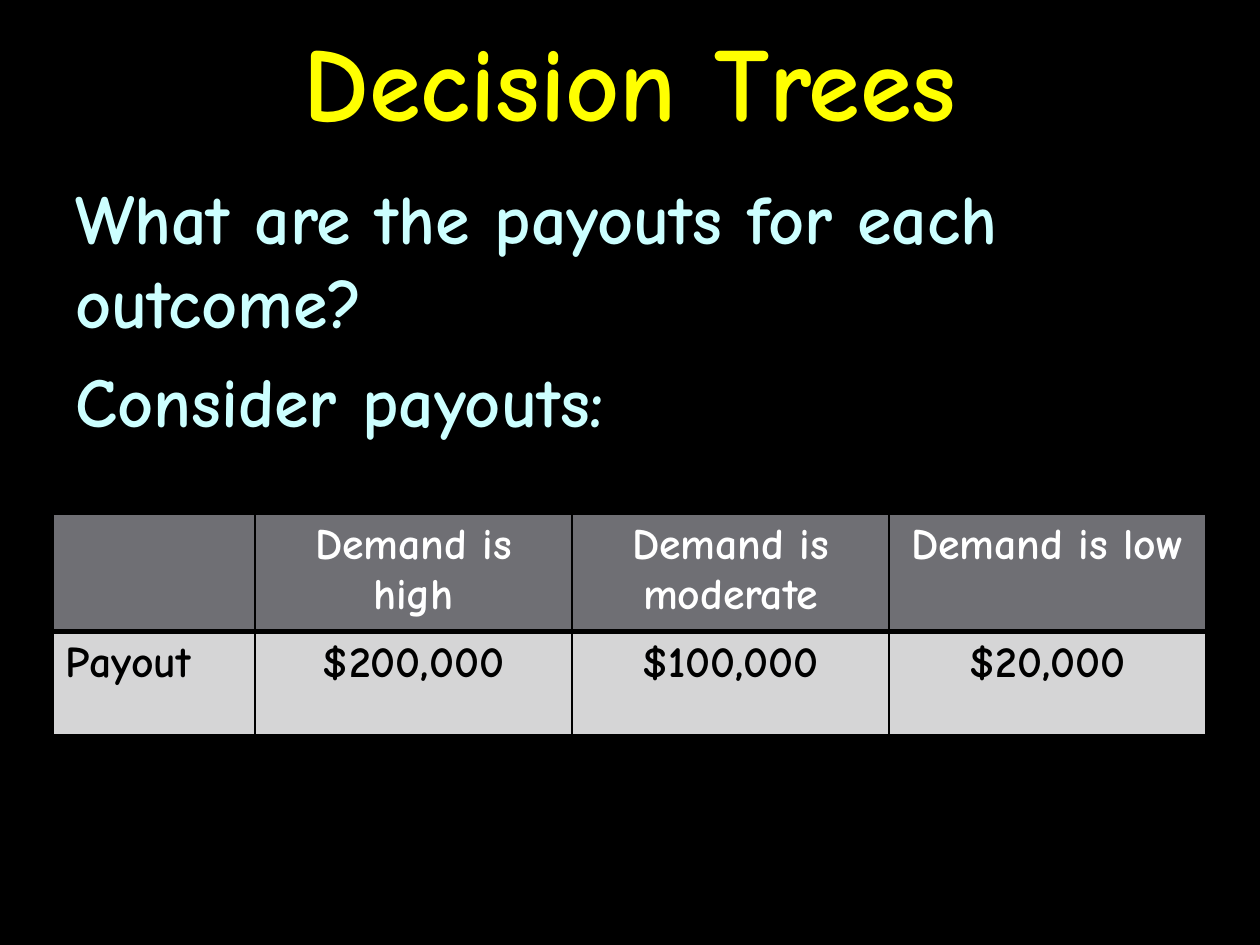
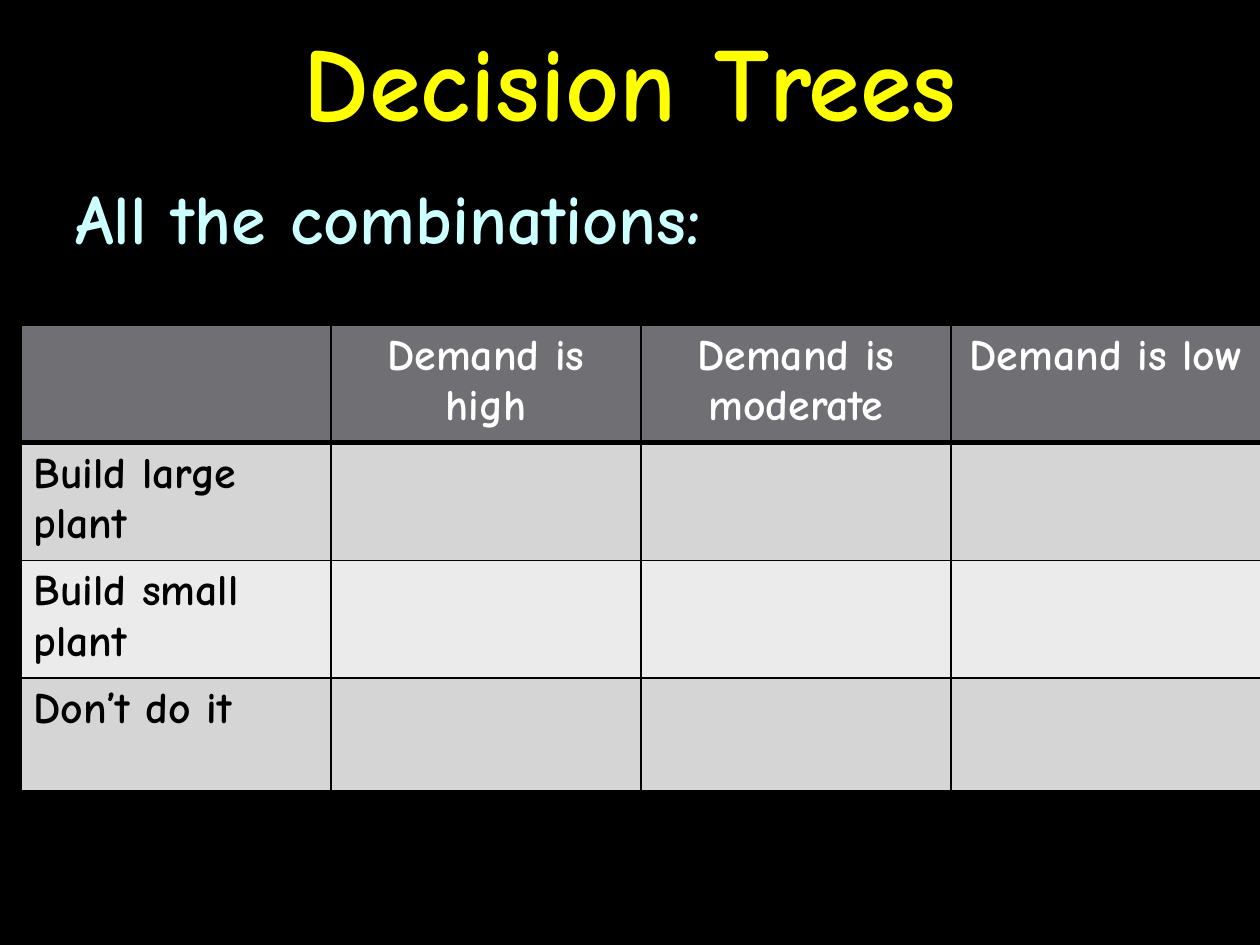
from lxml.etree import SubElement
from pptx import Presentation
from pptx.dml.color import RGBColor
from pptx.enum.text import MSO_ANCHOR, PP_ALIGN
from pptx.oxml.ns import qn
from pptx.util import Emu, Pt

FONT = "Comic Neue"
COLORS = {
    "background": "000000",
    "title": "FFFF00",
    "body": "CCFFFF",
    "header_text": "FFFFFF",
    "cell_text": "000000",
    "border": "000000",
    "header": "6F6F74",
    "odd_row": "D5D5D6",
    "even_row": "EBEBEB",
}
EMU_PER_PX = 914400 / 126
SLIDE_WIDTH, SLIDE_HEIGHT = 1260, 945
TITLE_AREA = (0, 0, 1260, 158)
BODY_AREA = (63, 168, 1134, 777)
DEMAND_HEADER = ["", "Demand is high", "Demand is moderate", "Demand is low"]

SLIDES = [
    {
        "title": "Decision Trees",
        "body": ["What are the payouts for each outcome?", "Consider payouts:"],
        "table_at": (53, 514),
        "column_widths": [202, 317, 317, 317],
        "row_heights": [113, 103],
        "rows": [DEMAND_HEADER, ["Payout", "$200,000", "$100,000", "$20,000"]],
    },
    {
        "title": "Decision Trees",
        "body": ["All the combinations:"],
        "table_at": (21, 325),
        "column_widths": [310] * 4,
        "row_heights": [113] * 4,
        "rows": [
            DEMAND_HEADER,
            ["Build large plant", "", "", ""],
            ["Build small plant", "", "", ""],
            ["Don’t do it", "", "", ""],
        ],
    },
]


def px(length):
    return Emu(round(length * EMU_PER_PX))


def color(name):
    return RGBColor.from_string(COLORS[name])


def style_paragraph(para, size, color_name, align=PP_ALIGN.LEFT):
    para.alignment = align
    para.font.name = FONT
    para.font.size = Pt(size)
    para.font.bold = True
    para.font.color.rgb = color(color_name)


def add_text(page, area, lines, size, color_name, align=PP_ALIGN.LEFT,
             anchor=MSO_ANCHOR.TOP, space_before=0):
    frame = page.shapes.add_textbox(*map(px, area)).text_frame
    frame.word_wrap = True
    frame.vertical_anchor = anchor
    frame.text = "\n".join(lines)
    for para in frame.paragraphs:
        style_paragraph(para, size, color_name, align)
        para.space_before = Pt(space_before)


def set_borders(cell, row_index):
    """Thin lines all round, with a thick rule between header and first row."""
    widths = {
        "L": 1,
        "R": 1,
        "T": 3 if row_index == 1 else 1,
        "B": 3 if row_index == 0 else 1,
    }
    properties = cell._tc.get_or_add_tcPr()
    for side, width in widths.items():
        line = SubElement(properties, qn(f"a:ln{side}"), w=str(int(Pt(width))))
        fill = SubElement(line, qn("a:solidFill"))
        SubElement(fill, qn("a:srgbClr"), val=COLORS["border"])


def row_fill(row_index):
    if row_index == 0:
        return "header"
    return "odd_row" if row_index % 2 else "even_row"


def add_demand_table(page, content):
    rows, widths, heights = (
        content[key] for key in ("rows", "column_widths", "row_heights"))
    area = (*content["table_at"], sum(widths), sum(heights))
    table = page.shapes.add_table(len(rows), len(widths), *map(px, area)).table
    for column, width in zip(table.columns, widths):
        column.width = px(width)
    for row_index, (row, height) in enumerate(zip(rows, heights)):
        table.rows[row_index].height = px(height)
        for column_index, text in enumerate(row):
            cell = table.cell(row_index, column_index)
            set_borders(cell, row_index)
            cell.fill.solid()
            cell.fill.fore_color.rgb = color(row_fill(row_index))
            cell.text = text
            style_paragraph(
                cell.text_frame.paragraphs[0], 25,
                "cell_text" if row_index else "header_text",
                PP_ALIGN.CENTER if column_index else PP_ALIGN.LEFT)


def add_page(deck, content):
    page = deck.slides.add_slide(deck.slide_layouts[6])
    page.background.fill.solid()
    page.background.fill.fore_color.rgb = color("background")
    add_text(page, TITLE_AREA, [content["title"]], 60, "title",
             PP_ALIGN.CENTER, MSO_ANCHOR.MIDDLE)
    add_text(page, BODY_AREA, content["body"], 40, "body", space_before=9)
    add_demand_table(page, content)


def main():
    deck = Presentation()
    deck.slide_width, deck.slide_height = px(SLIDE_WIDTH), px(SLIDE_HEIGHT)
    for content in SLIDES:
        add_page(deck, content)
    deck.save("out.pptx")


if __name__ == "__main__":
    main()
